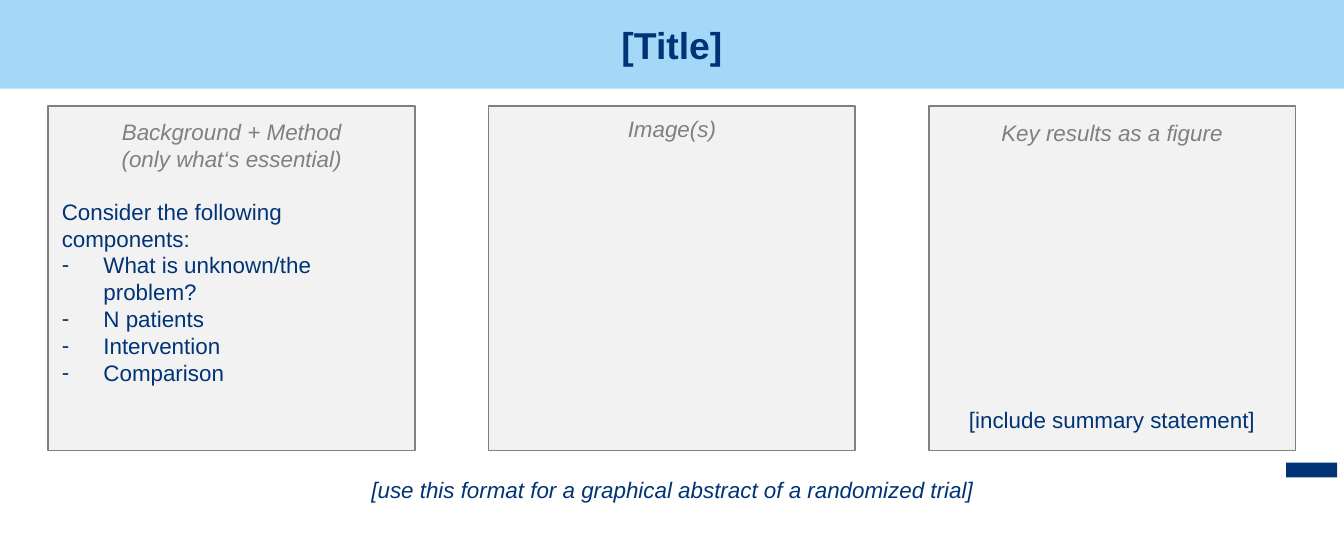
from lxml import etree
from pptx import Presentation
from pptx import util as u
from pptx.dml.color import RGBColor
from pptx.enum import shapes, text
from pptx.oxml.ns import qn

# Content
TITLE = "[Title]"
HEADS = [  # top, height, lines
    (0.83, 0.5, ["Background + Method", "(only what‘s essential)"]),
    (0.81, 0.3, ["Image(s)"]),
    (0.84, 0.3, ["Key results as a figure"]),
]
LEAD = "Consider the following components:"
ITEMS = ["What is unknown/the problem?", "N patients", "Intervention", "Comparison"]
SUM = "[include summary statement]"
NOTE = "[use this format for a graphical abstract of a randomized trial]"

# Look and layout
NAVY, SKY, PALE, GREY = "013476", "A4D8F6", "F2F2F2", "808080"
WIDE, HIGH, EDGE = 10, 4, 0.36
PANEL_W, PANEL_H, PANEL_Y = 2.73, 2.56, 0.79
STEP = (WIDE - 2 * EDGE - PANEL_W) / (len(HEADS) - 1)
LEFTS = [EDGE + i * STEP for i in range(len(HEADS))]
CENTER, LEFT = text.PP_ALIGN.CENTER, text.PP_ALIGN.LEFT


def color(code):
    return RGBColor.from_string(code)


def place(shape, x, y, w, h):
    shape.left, shape.top = u.Inches(x), u.Inches(y)
    shape.width, shape.height = u.Inches(w), u.Inches(h)


def rect(x, y, w, h, fill, line=None):
    box = slide.shapes.add_shape(
        shapes.MSO_SHAPE.RECTANGLE, *map(u.Inches, (x, y, w, h)))
    box.shadow.inherit = False
    box.fill.solid()
    box.fill.fore_color.rgb = color(fill)
    if line:
        box.line.color.rgb = color(line)
        box.line.width = u.Pt(1)
    else:
        box.line.fill.background()


def write(shape, lines, ink, align=CENTER, size=12, bold=False, slant=False):
    frame = shape.text_frame
    frame.word_wrap = True
    frame.auto_size = text.MSO_AUTO_SIZE.NONE
    for i, line in enumerate(lines):
        para = frame.add_paragraph() if i else frame.paragraphs[0]
        para.alignment = align
        para.space_before = u.Pt(0)
        run = para.add_run()
        run.text = line
        font = run.font
        font.name, font.size = "Arial", u.Pt(size)
        font.bold, font.italic = bold, slant
        font.color.rgb = color(ink)
    return frame


def label(x, y, w, h, lines, ink, slant=False):
    box = slide.shapes.add_textbox(*map(u.Inches, (x, y, w, h)))
    write(box, lines, ink, slant=slant)


def bullet(para, mark=None):
    props = para._p.get_or_add_pPr()
    dent = u.Inches(0.31) if mark else 0
    props.set("marL", str(dent))
    props.set("indent", str(-dent))
    if mark:
        etree.SubElement(props, qn("a:buChar")).set("char", mark)
    else:
        etree.SubElement(props, qn("a:buNone"))


deck = Presentation()
deck.slide_width, deck.slide_height = u.Inches(WIDE), u.Inches(HIGH)
slide = deck.slides.add_slide(deck.slide_layouts[1])
title, body = slide.placeholders

# Title band and corner mark
place(title, 0, 0, WIDE, 0.66)
title.fill.solid()
title.fill.fore_color.rgb = color(SKY)
frame = write(title, [TITLE], NAVY, size=20, bold=True)
frame.vertical_anchor = text.MSO_ANCHOR.MIDDLE
rect(9.57, 3.44, 0.38, 0.11, NAVY)

# Panels with their headings
for x, (y, h, lines) in zip(LEFTS, HEADS):
    rect(x, PANEL_Y, PANEL_W, PANEL_H, PALE, GREY)
    label(x, y, PANEL_W, h, lines, GREY, slant=True)

# List, brought in front of its panel
place(body, EDGE, 1.42, PANEL_W, 1.51)
frame = write(body, [LEAD] + ITEMS, NAVY, LEFT)
for i, para in enumerate(frame.paragraphs):
    bullet(para, "-" if i else None)
slide.shapes._spTree.append(body._element)

# Summary and footnote
label(LEFTS[-1], 2.97, PANEL_W, 0.3, [SUM], NAVY)
label(1.11, 3.49, 7.79, 0.3, [NOTE], NAVY, slant=True)

deck.save("out.pptx")
